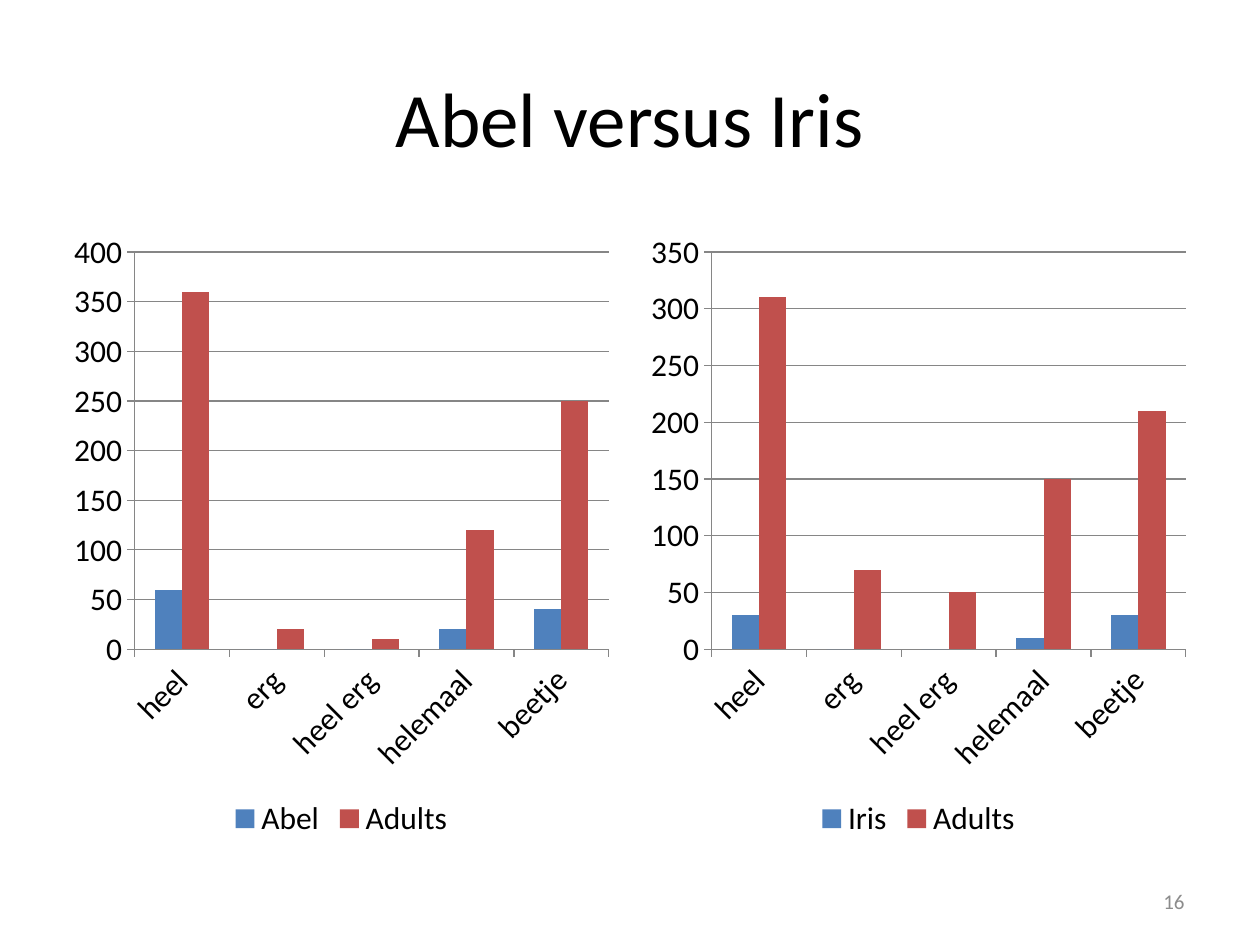
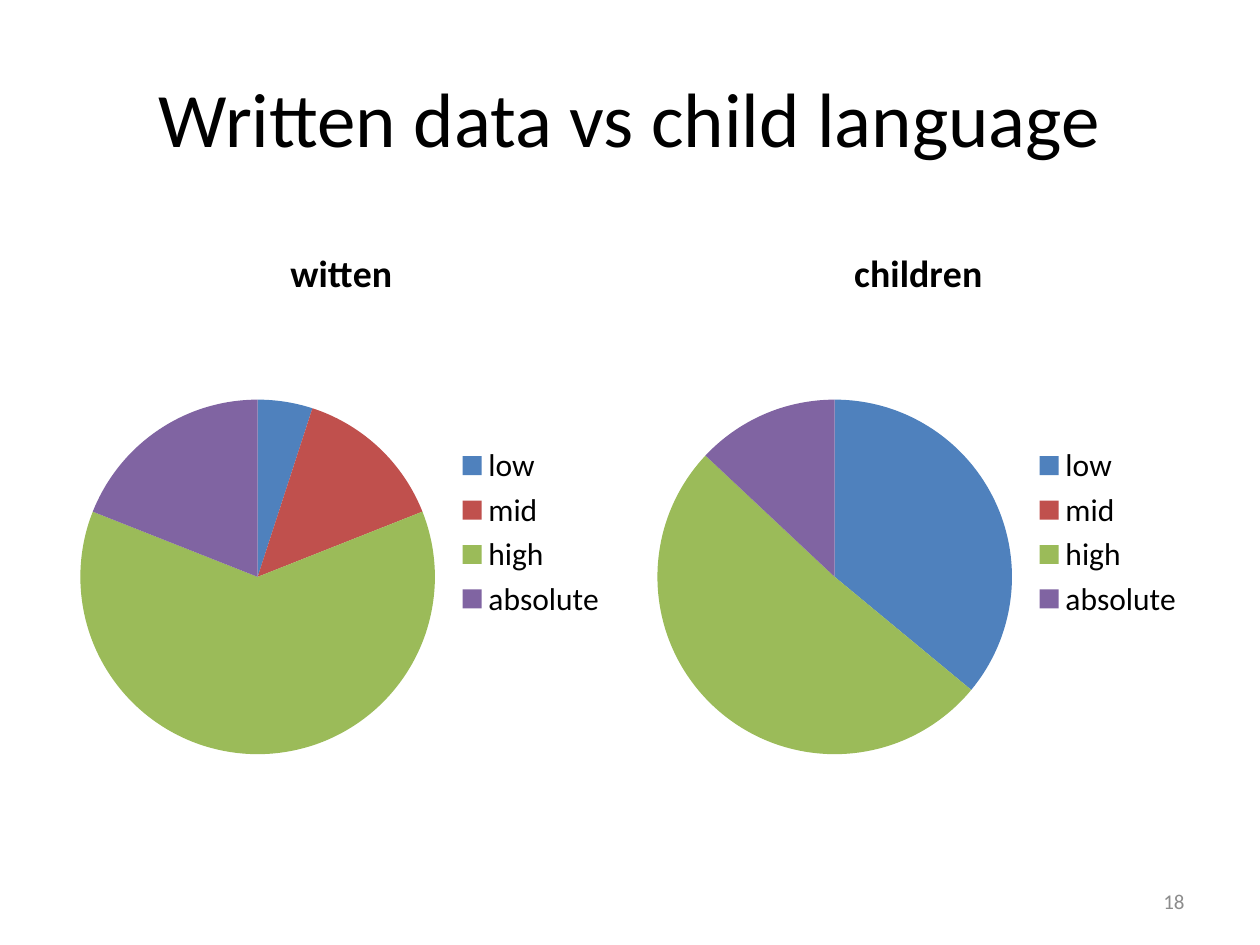
from pptx import Presentation
from pptx.chart.data import CategoryChartData
from pptx.dml.color import RGBColor
from pptx.enum.chart import XL_CHART_TYPE, XL_LEGEND_POSITION, XL_TICK_MARK
from pptx.enum.text import MSO_ANCHOR, PP_ALIGN
from pptx.util import Inches, Pt

COLUMN, PIE = XL_CHART_TYPE.COLUMN_CLUSTERED, XL_CHART_TYPE.PIE
BOTTOM, RIGHT = XL_LEGEND_POSITION.BOTTOM, XL_LEGEND_POSITION.RIGHT
OUTSIDE = XL_TICK_MARK.OUTSIDE
ALIGN_CENTER, ALIGN_RIGHT = PP_ALIGN.CENTER, PP_ALIGN.RIGHT
MIDDLE = MSO_ANCHOR.MIDDLE

# Content
INTENSIFIERS = ["heel", "erg", "heel erg", "helemaal", "beetje"]
DEGREES = ["low", "mid", "high", "absolute"]
SLIDES = [
    {"title": "Abel versus Iris", "number": "16", "kind": COLUMN,
     "categories": INTENSIFIERS,
     "charts": [
         {"Abel": [60, 0, 0, 20, 40], "Adults": [360, 20, 10, 120, 250]},
         {"Iris": [30, 0, 0, 10, 30], "Adults": [310, 70, 50, 150, 210]},
     ],
     "axis_tops": [400, 350]},
    {"title": "Written data vs child language", "number": "18", "kind": PIE,
     "categories": DEGREES,
     "charts": [{"witten": [5, 14, 62, 19]}, {"children": [36, 0, 51, 13]}]},
]

# Shared style
FONT = "Calibri"
BLACK, GRAY, AXIS_GRAY = "000000", "8C8C8C", "868686"
PALETTE = ["4F81BD", "C0504D", "9BBB59", "8064A2"]
MARGIN = 0.5
CHART_TOP, CHART_WIDTH, CHART_HEIGHT, CHART_GAP = 1.75, 4.42, 4.95, 0.16
AXIS_STEP = 50


def color(hex_text):
    return RGBColor.from_string(hex_text)


def style_font(font, size, hex_text=BLACK, bold=False):
    font.name, font.size, font.bold = FONT, Pt(size), bold
    font.color.rgb = color(hex_text)


def add_text(page, text, left, top, width, height, size, hex_text, align):
    box = page.shapes.add_textbox(
        Inches(left), Inches(top), Inches(width), Inches(height))
    frame = box.text_frame
    frame.word_wrap = True
    frame.vertical_anchor = MIDDLE
    para = frame.paragraphs[0]
    para.alignment = align
    span = para.add_run()
    span.text = text
    style_font(span.font, size, hex_text)


def paint(part, hex_text):
    part.format.fill.solid()
    part.format.fill.fore_color.rgb = color(hex_text)


def add_chart(page, kind, categories, series, left):
    data = CategoryChartData()
    data.categories = categories
    for name, values in series.items():
        data.add_series(name, values)
    chart = page.shapes.add_chart(
        kind, Inches(left), Inches(CHART_TOP),
        Inches(CHART_WIDTH), Inches(CHART_HEIGHT), data).chart
    style_font(chart.font, 18)
    chart.has_legend = True
    chart.legend.include_in_layout = False
    chart.plots[0].vary_by_categories = kind == PIE
    return chart


def style_columns(chart, axis_top):
    chart.has_title = False
    chart.legend.position = BOTTOM
    plot = chart.plots[0]
    plot.gap_width, plot.overlap = 150, 0
    for bars, hex_text in zip(plot.series, PALETTE):
        paint(bars, hex_text)
    value_axis, category_axis = chart.value_axis, chart.category_axis
    value_axis.minimum_scale, value_axis.maximum_scale = 0, axis_top
    value_axis.major_unit = AXIS_STEP
    value_axis.has_major_gridlines = True
    for axis in (value_axis, category_axis):
        axis.major_tick_mark = OUTSIDE
        style_font(axis.tick_labels.font, 18)
    for line in (value_axis.format.line, category_axis.format.line,
                 value_axis.major_gridlines.format.line):
        line.color.rgb = color(AXIS_GRAY)
        line.width = Pt(0.75)
    # Slant the category labels by 45 degrees
    label_body = category_axis.tick_labels.font._element.getparent().getparent().getparent()[0]
    label_body.set("rot", str(-45 * 60000))


def style_pie(chart):
    slices = chart.plots[0].series[0]
    chart.has_title = True
    frame = chart.chart_title.text_frame
    frame.text = slices.name
    style_font(frame.paragraphs[0].runs[0].font, 21.6, bold=True)
    chart.chart_title.include_in_layout = False
    chart.legend.position = RIGHT
    for index, hex_text in enumerate(PALETTE):
        paint(slices.points[index], hex_text)


def build_slide(deck, content):
    page = deck.slides.add_slide(deck.slide_layouts[6])
    add_text(page, content["title"], MARGIN, 0.3, 9, 1.25,
             size=44, hex_text=BLACK, align=ALIGN_CENTER)
    for index, series in enumerate(content["charts"]):
        left = MARGIN + index * (CHART_WIDTH + CHART_GAP)
        chart = add_chart(page, content["kind"], content["categories"], series, left)
        if content["kind"] == PIE:
            style_pie(chart)
        else:
            style_columns(chart, content["axis_tops"][index])
    add_text(page, content["number"], 7.17, 6.95, 2.33, 0.4,
             size=12, hex_text=GRAY, align=ALIGN_RIGHT)


def main():
    deck = Presentation()
    deck.slide_width, deck.slide_height = Inches(10), Inches(7.5)
    for content in SLIDES:
        build_slide(deck, content)
    deck.save("out.pptx")


if __name__ == "__main__":
    main()
